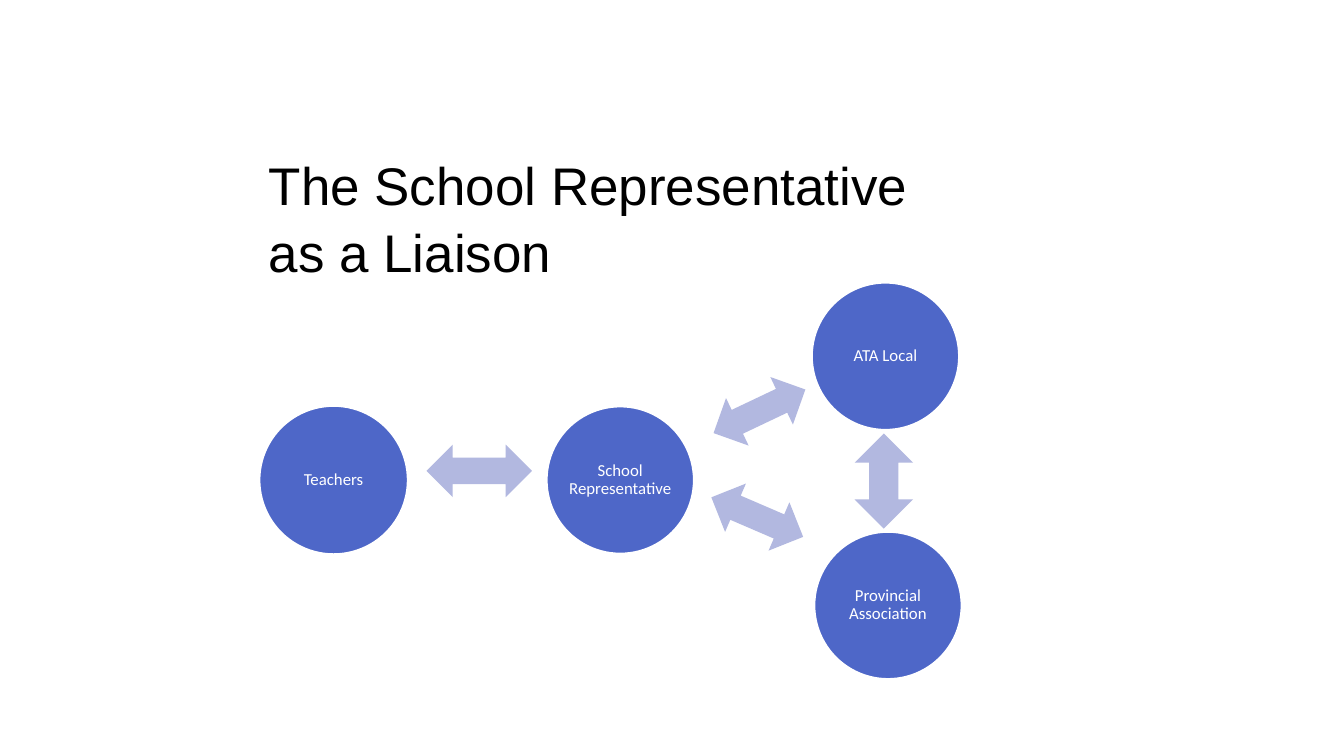
from dataclasses import dataclass

from pptx import Presentation
from pptx.dml.color import RGBColor
from pptx.enum.shapes import MSO_SHAPE as Preset
from pptx.enum.text import MSO_ANCHOR as Anchor, PP_ALIGN as Align
from pptx.shapes.autoshape import Shape
from pptx.slide import Slide
from pptx.text.text import TextFrame
from pptx.util import Pt


@dataclass(frozen=True)
class Theme:
    circle: RGBColor = RGBColor(0x4E, 0x67, 0xC8)
    arrow: RGBColor = RGBColor(0xB2, 0xB8, 0xE0)
    light: RGBColor = RGBColor(0xFF, 0xFF, 0xFF)
    dark: RGBColor = RGBColor(0, 0, 0)
    title_font: str = "Arial"
    label_font: str = "Calibri"
    title_size: float = 37.8
    label_size: float = 12


@dataclass(frozen=True)
class Circle:
    label: str
    left: float
    top: float
    diameter: float = 105.8
    side_inset: float = 1.4


@dataclass(frozen=True)
class Arrow:
    left: float
    top: float
    width: float
    height: float
    rotation: float = 0
    preset: Preset = Preset.LEFT_RIGHT_ARROW


THEME = Theme()

CIRCLES = [
    Circle("Teachers", 185, 289.6, diameter=106.6),
    Circle("School Representative", 390.2, 290, side_inset=0),
    Circle("ATA Local", 579.6, 201.6),
    Circle("Provincial Association", 581.4, 379.6),
]

ARROWS = [
    Arrow(304.6, 317.6, 75.4, 37.6),
    Arrow(506.2, 275, 72.6, 37.6, rotation=334.6),
    Arrow(505.2, 350.6, 71.4, 37.6, rotation=23.3),
    Arrow(610.4, 309.6, 41.8, 68, preset=Preset.UP_DOWN_ARROW),
]


def write_text(frame: TextFrame, text: str, font: str, size: float,
               color: RGBColor, align: Align, spacing: float) -> None:
    frame.word_wrap = True
    frame.vertical_anchor = Anchor.MIDDLE
    frame.text = text
    para = frame.paragraphs[0]
    para.alignment = align
    para.line_spacing = spacing
    span = para.runs[0]
    span.font.name = font
    span.font.size = Pt(size)
    span.font.color.rgb = color


def add_filled(page: Slide, preset: Preset, left: float, top: float,
               width: float, height: float, color: RGBColor) -> Shape:
    shape = page.shapes.add_shape(preset, Pt(left), Pt(top), Pt(width), Pt(height))
    shape.shadow.inherit = False
    shape.fill.solid()
    shape.fill.fore_color.rgb = color
    shape.line.fill.background()
    return shape


def draw_circle(page: Slide, circle: Circle) -> None:
    shape = add_filled(page, Preset.OVAL, circle.left, circle.top,
                       circle.diameter, circle.diameter, THEME.circle)
    shape.line.color.rgb = THEME.light
    shape.line.width = Pt(2)
    frame = shape.text_frame
    frame.margin_left = frame.margin_right = Pt(circle.side_inset)
    frame.margin_top = frame.margin_bottom = Pt(1.4)
    write_text(frame, circle.label, THEME.label_font, THEME.label_size,
               THEME.light, Align.CENTER, 0.9)


def draw_arrow(page: Slide, arrow: Arrow) -> None:
    shape = add_filled(page, arrow.preset, arrow.left, arrow.top,
                       arrow.width, arrow.height, THEME.arrow)
    shape.rotation = arrow.rotation


def main() -> None:
    deck = Presentation()
    deck.slide_width, deck.slide_height = Pt(960), Pt(540)
    page = deck.slides.add_slide(deck.slide_layouts[6])

    # Title
    box = page.shapes.add_textbox(Pt(185), Pt(111.6), Pt(476), Pt(85.6))
    write_text(box.text_frame, "The School Representative as a Liaison",
               THEME.title_font, THEME.title_size, THEME.dark, Align.LEFT, 1.05)

    # People and bodies
    for circle in CIRCLES:
        draw_circle(page, circle)

    # Two-way links between them
    for arrow in ARROWS:
        draw_arrow(page, arrow)

    deck.save("out.pptx")


if __name__ == "__main__":
    main()
